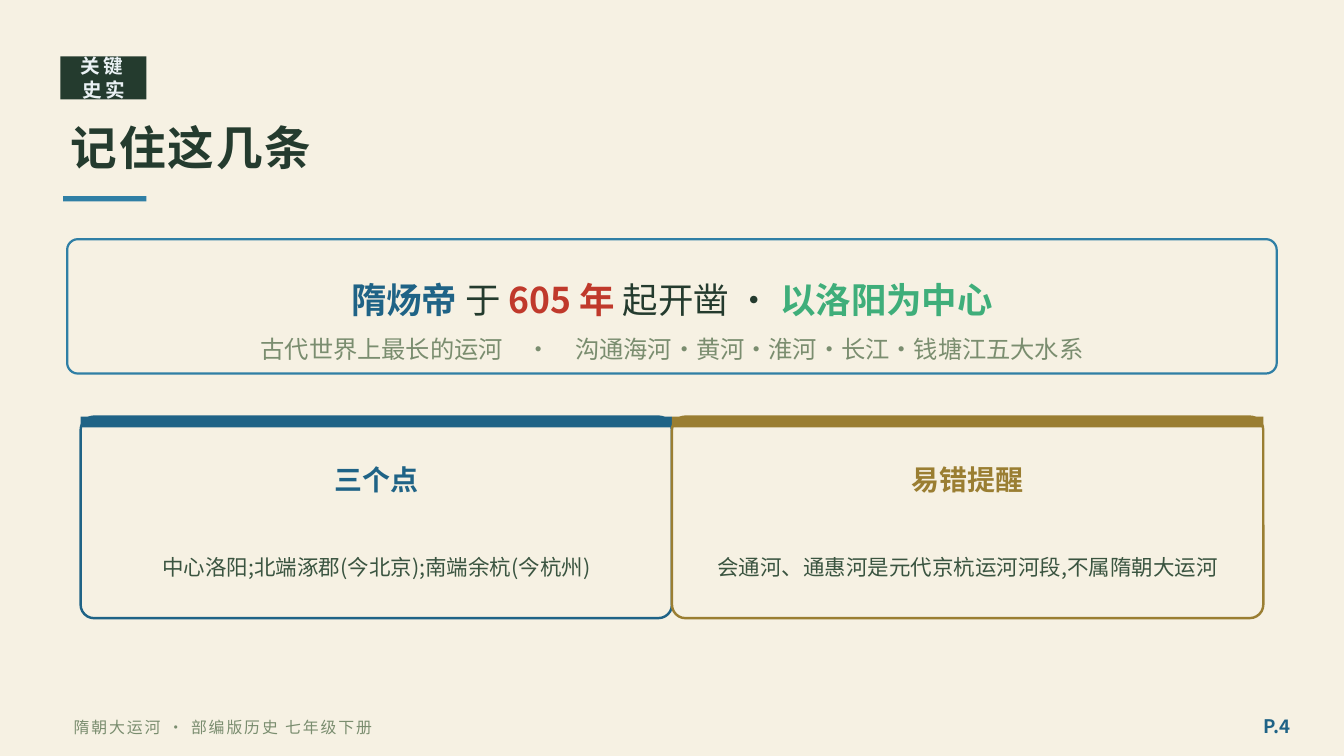
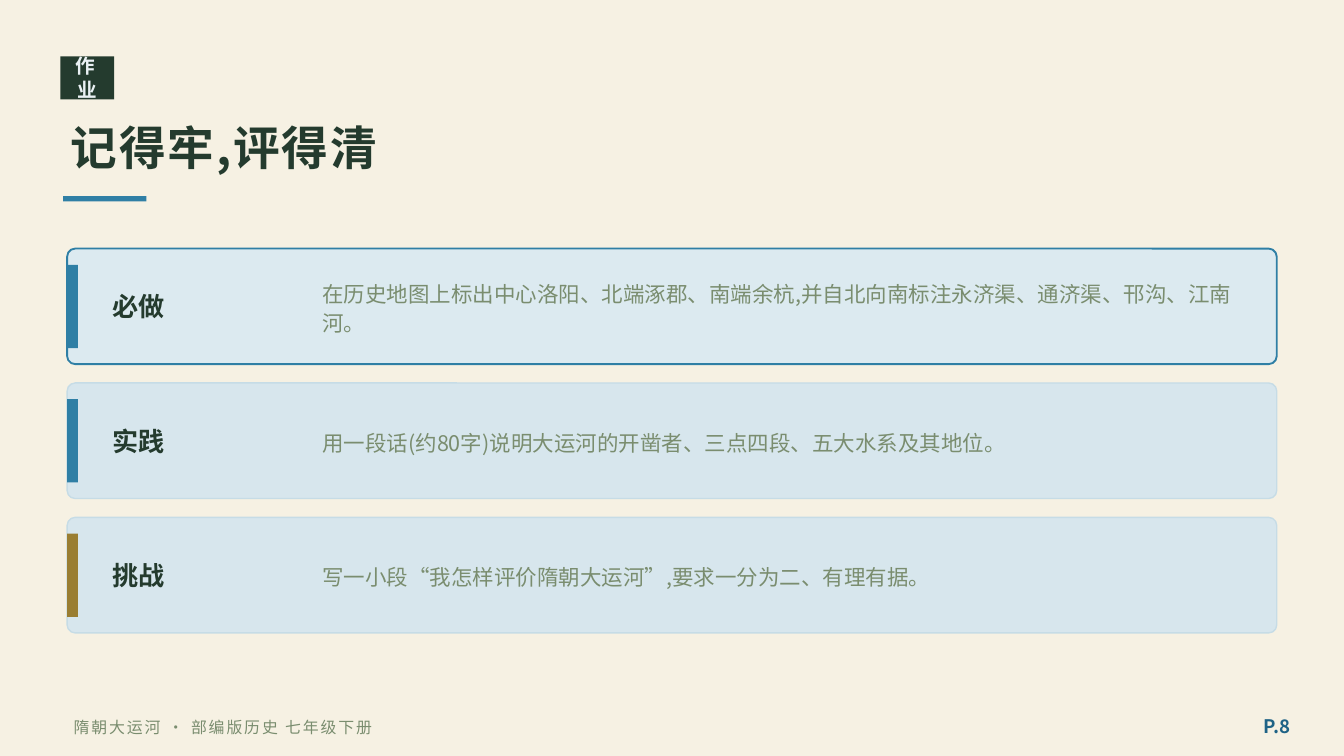
from dataclasses import dataclass

from lxml import etree
from pptx import Presentation
from pptx.dml.color import RGBColor
from pptx.enum.shapes import MSO_SHAPE
from pptx.enum.text import MSO_ANCHOR, PP_ALIGN
from pptx.oxml.ns import qn
from pptx.util import Inches, Pt

RECT = MSO_SHAPE.RECTANGLE
ROUNDED = MSO_SHAPE.ROUNDED_RECTANGLE
MIDDLE = MSO_ANCHOR.MIDDLE
LEFT, CENTER, RIGHT = PP_ALIGN.LEFT, PP_ALIGN.CENTER, PP_ALIGN.RIGHT


@dataclass(frozen=True)
class Theme:
    font: str = "Noto Sans CJK SC"
    # Colours
    paper: str = "F6F1E3"
    ink: str = "243B2E"
    body: str = "3A5440"
    muted: str = "7A8D6F"
    tag_text: str = "EAF1F4"
    water: str = "2F7FA5"
    deep: str = "1F6386"
    gold: str = "9A7E32"
    red: str = "C0392B"
    green: str = "3FAE7A"
    active: str = "DCEAF0"
    panel: str = "D7E6ED"
    panel_line: str = "C6DCE6"
    # Type sizes in points
    title: float = 25
    lead: float = 19
    heading: float = 15
    label: float = 14
    caption: float = 13
    text: float = 11.5
    tag: float = 10.5
    number: float = 10
    footer: float = 8.5


THEME = Theme()

# Square grid: 100 columns across, 56.25 rows down
SLIDE_WIDTH, SLIDE_HEIGHT = Inches(10), Inches(5.625)
CELL = SLIDE_WIDTH / 100
MARGIN = 5
CONTENT = 100 - 2 * MARGIN


def on_grid(*cells):
    return [round(cell * CELL) for cell in cells]


def color(value):
    return RGBColor.from_string(value)


# Basic elements

def add_block(page, area, fill, kind=RECT, line=None, line_width=1, radius=None):
    block = page.shapes.add_shape(kind, *on_grid(*area))
    block.shadow.inherit = False
    block.fill.solid()
    block.fill.fore_color.rgb = color(fill)
    if line:
        block.line.color.rgb = color(line)
        block.line.width = Pt(line_width)
    else:
        block.line.fill.background()
    if radius is not None:
        block.adjustments[0] = radius


def add_span(para, text, size, tint, bold=False, tracking=0):
    span = para.add_run()
    span.text = text
    span.font.size = Pt(size)
    span.font.bold = bold
    span.font.color.rgb = color(tint)
    span.font.name = THEME.font
    properties = span.font._element
    etree.SubElement(properties, qn("a:ea")).set("typeface", THEME.font)
    if tracking:
        properties.set("spc", str(tracking * 100))


def add_para(page, area, align=LEFT, leading=None):
    box = page.shapes.add_textbox(*on_grid(*area))
    frame = box.text_frame
    frame.word_wrap = True
    frame.vertical_anchor = MIDDLE
    para = frame.paragraphs[0]
    para.alignment = align
    if leading:
        para.line_spacing = Pt(leading)
    return para


def add_text(page, area, text, size, tint, bold=False, tracking=0,
             align=LEFT, leading=None):
    para = add_para(page, area, align, leading)
    add_span(para, text, size, tint, bold, tracking)


# Frame shared by the pages

def add_page(deck, tag, tag_width, title, number):
    page = deck.slides.add_slide(deck.slide_layouts[6])
    page.background.fill.solid()
    page.background.fill.fore_color.rgb = color(THEME.paper)

    add_block(page, (4.5, 4.2, tag_width, 3.2), THEME.ink)
    add_text(page, (4.5, 4.1, tag_width, 3.4), tag, THEME.tag, THEME.tag_text,
             bold=True, tracking=2, align=CENTER)
    add_text(page, (4.3, 7.8, CONTENT, 6.2), title, THEME.title, THEME.ink,
             bold=True, tracking=1)
    add_block(page, (4.7, 14.6, 6.2, 0.4), THEME.water)
    return page


def add_footer(page, number):
    add_text(page, (4.5, 52.6, 65, 3), "隋朝大运河 · 部编版历史 七年级下册",
             THEME.footer, THEME.muted, tracking=1)
    add_text(page, (91, 52.4, 6, 3.2), f"P.{number}", THEME.number, THEME.deep,
             bold=True, align=RIGHT)


# Key facts

def add_key_fact(page, top, spans, caption):
    add_block(page, (MARGIN, top, CONTENT, 10), THEME.paper, ROUNDED,
              THEME.water, 1.2, 0.08)
    para = add_para(page, (MARGIN, top + 2, CONTENT, 5), CENTER)
    for text, tint, bold in spans:
        add_span(para, text, THEME.lead, tint, bold)
    add_text(page, (MARGIN, top + 6.4, CONTENT, 3.5), caption, THEME.caption,
             THEME.muted, align=CENTER)


def add_card(page, left, top, width, accent, heading, text):
    add_block(page, (left, top, width, 15), THEME.paper, ROUNDED, accent, 1.3, 0.067)
    add_block(page, (left, top, width, 0.8), accent)
    add_text(page, (left, top + 2.2, width, 5), heading, THEME.heading, accent,
             bold=True, align=CENTER)
    add_text(page, (left + 2, top + 7.6, width - 4, 7), text, THEME.text,
             THEME.body, align=CENTER, leading=15)


def build_key_facts(deck):
    page = add_page(deck, "关键史实", 6.4, "记住这几条", 4)
    add_key_fact(
        page, 17.8,
        [("隋炀帝 ", THEME.deep, True),
         ("于 ", THEME.ink, False),
         ("605 年 ", THEME.red, True),
         ("起开凿 · ", THEME.ink, False),
         ("以洛阳为中心", THEME.green, True)],
        "古代世界上最长的运河　·　沟通海河·黄河·淮河·长江·钱塘江五大水系")

    cards = [
        (THEME.deep, "三个点", "中心洛阳;北端涿郡(今北京);南端余杭(今杭州)"),
        (THEME.gold, "易错提醒", "会通河、通惠河是元代京杭运河河段,不属隋朝大运河"),
    ]
    width = 44
    for index, card in enumerate(cards):
        add_card(page, 6 + index * width, 31, width, *card)
    add_footer(page, 4)


# Homework

def add_task(page, top, accent, label, text, active):
    fill, line, line_width = (
        (THEME.active, THEME.water, 1) if active
        else (THEME.panel, THEME.panel_line, 0.75))
    add_block(page, (MARGIN, top, CONTENT, 8.6), fill, ROUNDED, line, line_width, 0.07)
    add_block(page, (MARGIN, top + 1.2, 0.8, 6.2), accent)
    add_text(page, (7.4, top + 1, 14, 6.6), label, THEME.label, THEME.ink, bold=True)
    add_text(page, (23, top + 0.8, 70, 7), text, THEME.text, THEME.muted, leading=16)


def build_homework(deck):
    page = add_page(deck, "作业", 4, "记得牢,评得清", 8)
    tasks = [
        (THEME.water, "必做", "在历史地图上标出中心洛阳、北端涿郡、南端余杭,"
                            "并自北向南标注永济渠、通济渠、邗沟、江南河。"),
        (THEME.water, "实践", "用一段话(约80字)说明大运河的开凿者、三点四段、五大水系及其地位。"),
        (THEME.gold, "挑战", "写一小段“我怎样评价隋朝大运河”,要求一分为二、有理有据。"),
    ]
    for index, task in enumerate(tasks):
        add_task(page, 18.5 + index * 10, *task, active=index == 0)
    add_footer(page, 8)


def main():
    deck = Presentation()
    deck.slide_width, deck.slide_height = SLIDE_WIDTH, SLIDE_HEIGHT
    build_key_facts(deck)
    build_homework(deck)
    deck.save("out.pptx")


if __name__ == "__main__":
    main()
